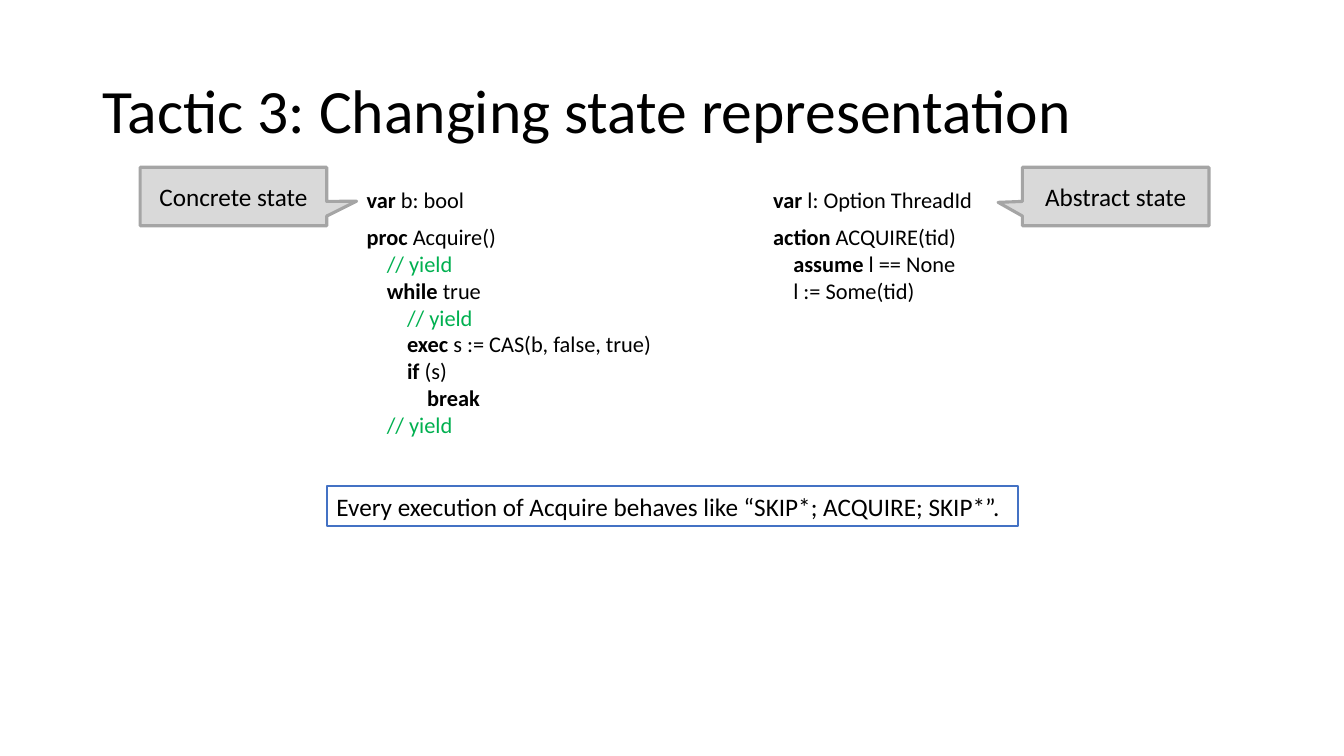
from dataclasses import dataclass

from pptx import Presentation
from pptx.dml.color import RGBColor
from pptx.enum.shapes import MSO_SHAPE
from pptx.enum.text import MSO_ANCHOR, MSO_AUTO_SIZE, PP_ALIGN
from pptx.util import Inches, Pt

RECT, WEDGE = MSO_SHAPE.RECTANGLE, MSO_SHAPE.RECTANGULAR_CALLOUT
LEFT, CENTER = PP_ALIGN.LEFT, PP_ALIGN.CENTER
TOP, MIDDLE = MSO_ANCHOR.TOP, MSO_ANCHOR.MIDDLE
FIXED = MSO_AUTO_SIZE.NONE


@dataclass(frozen=True)
class Theme:
    """Hold the colours, the font and the type sizes."""
    font: str = "Calibri"
    ink: str = "000000"
    green: str = "00B050"
    paper: str = "FFFFFF"
    blue: str = "4472C4"
    pale: str = "D9D9D9"
    gray: str = "A5A5A5"
    head: int = 44
    note: int = 18
    code: int = 16


THEME = Theme()
WIDE, HIGH = Inches(13.333), Inches(7.5)
COL, ROW = WIDE / 100, HIGH / 100
INDENT = Inches(0.2)
GAP = Pt(7)
TAG_W, TAG_H, DROP = 13.88, 7.73, 1.87

CONCRETE = [
    (0, "var", " b: bool"),
    (0, "proc", " Acquire()"),
    (1, "", "// yield"),
    (1, "while", " true"),
    (2, "", "// yield"),
    (2, "exec", " s := CAS(b, false, true)"),
    (2, "if", " (s)"),
    (3, "break", ""),
    (1, "", "// yield"),
]
ABSTRACT = [
    (0, "var", " l: Option ThreadId"),
    (0, "action", " ACQUIRE(tid)"),
    (1, "assume", " l == None"),
    (1, "", "l := Some(tid)"),
]


def place(box):
    """Turn a box in grid columns and rows into slide lengths."""
    x, y, w, h = box
    return [round(n) for n in (x * COL, y * ROW, w * COL, h * ROW)]


def apply(item, form):
    """Set each format value on the item."""
    for name, value in form.items():
        setattr(item, name, value)


def write(para, text, size, color=THEME.ink, bold=False):
    """Add one run of styled text to the paragraph."""
    run = para.add_run()
    run.text = text
    apply(run.font, {"name": THEME.font, "size": Pt(size), "bold": bold})
    run.font.color.rgb = RGBColor.from_string(color)


def title(slide, box, text):
    """Fill the title placeholder and move it to the box."""
    head = slide.shapes.title
    x, y, w, h = place(box)
    apply(head, {"left": x, "top": y, "width": w, "height": h})
    apply(head.text_frame, {"vertical_anchor": MIDDLE, "word_wrap": True,
                            "auto_size": FIXED})
    para = head.text_frame.paragraphs[0]
    apply(para, {"alignment": LEFT, "line_spacing": 0.9})
    write(para, text, THEME.head)


def label(slide, kind, box, text, fill, edge, weight, align, anchor, wrap):
    """Draw a filled and outlined shape with one line of text."""
    shape = slide.shapes.add_shape(kind, *place(box))
    shape.shadow.inherit = False
    shape.fill.solid()
    shape.fill.fore_color.rgb = RGBColor.from_string(fill)
    shape.line.color.rgb = RGBColor.from_string(edge)
    shape.line.width = Pt(weight)
    apply(shape.text_frame, {"vertical_anchor": anchor, "word_wrap": wrap})
    para = shape.text_frame.paragraphs[0]
    para.alignment = align
    write(para, text, THEME.note)
    return shape


def listing(slide, box, lines):
    """Write indented code with bold keywords and green comments."""
    frame = slide.shapes.add_textbox(*place(box)).text_frame
    frame.word_wrap = True
    for i, (depth, key, rest) in enumerate(lines):
        para = frame.add_paragraph() if i else frame.paragraphs[0]
        para._p.get_or_add_pPr().set("marL", str(depth * INDENT))
        if i == 1:
            para.space_before = GAP
        if key:
            write(para, key, THEME.code, bold=True)
        if rest:
            color = THEME.green if rest.startswith("//") else THEME.ink
            write(para, rest, THEME.code, color)


def panel(slide, box, name, lines, code_w, tip, flip=False):
    """Place a code listing and its callout at opposite sides of the box."""
    x, y, w, h = box
    tag_x, code_x = (x + w - TAG_W, x) if flip else (x, x + w - code_w)
    listing(slide, (code_x, y + DROP, code_w, h - DROP), lines)
    tag = label(slide, WEDGE, (tag_x, y, TAG_W, TAG_H), name, THEME.pale,
                THEME.gray, 2.25, CENTER, MIDDLE, True)
    for i, share in enumerate(tip):
        tag.adjustments[i] = share


def main():
    """Build the slide and save it."""
    deck = Presentation()
    apply(deck, {"slide_width": WIDE, "slide_height": HIGH})
    slide = deck.slides.add_slide(deck.slide_layouts[5])
    title(slide, (6.88, 5.33, 86.25, 19.33),
          "Tactic 3: Changing state representation")
    panel(slide, (10.43, 22.13, 40.12, 36.94), "Concrete state", CONCRETE,
          24, (0.66, 0.08))
    panel(slide, (56.79, 22.13, 33.16, 18.94), "Abstract state", ABSTRACT,
          18.08, (-0.63, 0.1), flip=True)
    label(slide, RECT, (24.3, 64.27, 51.46, 5.33),
          "Every execution of Acquire behaves like “SKIP*; ACQUIRE; SKIP*”.",
          THEME.paper, THEME.blue, 1.5, LEFT, TOP, False)
    deck.save("out.pptx")


if __name__ == "__main__":
    main()
